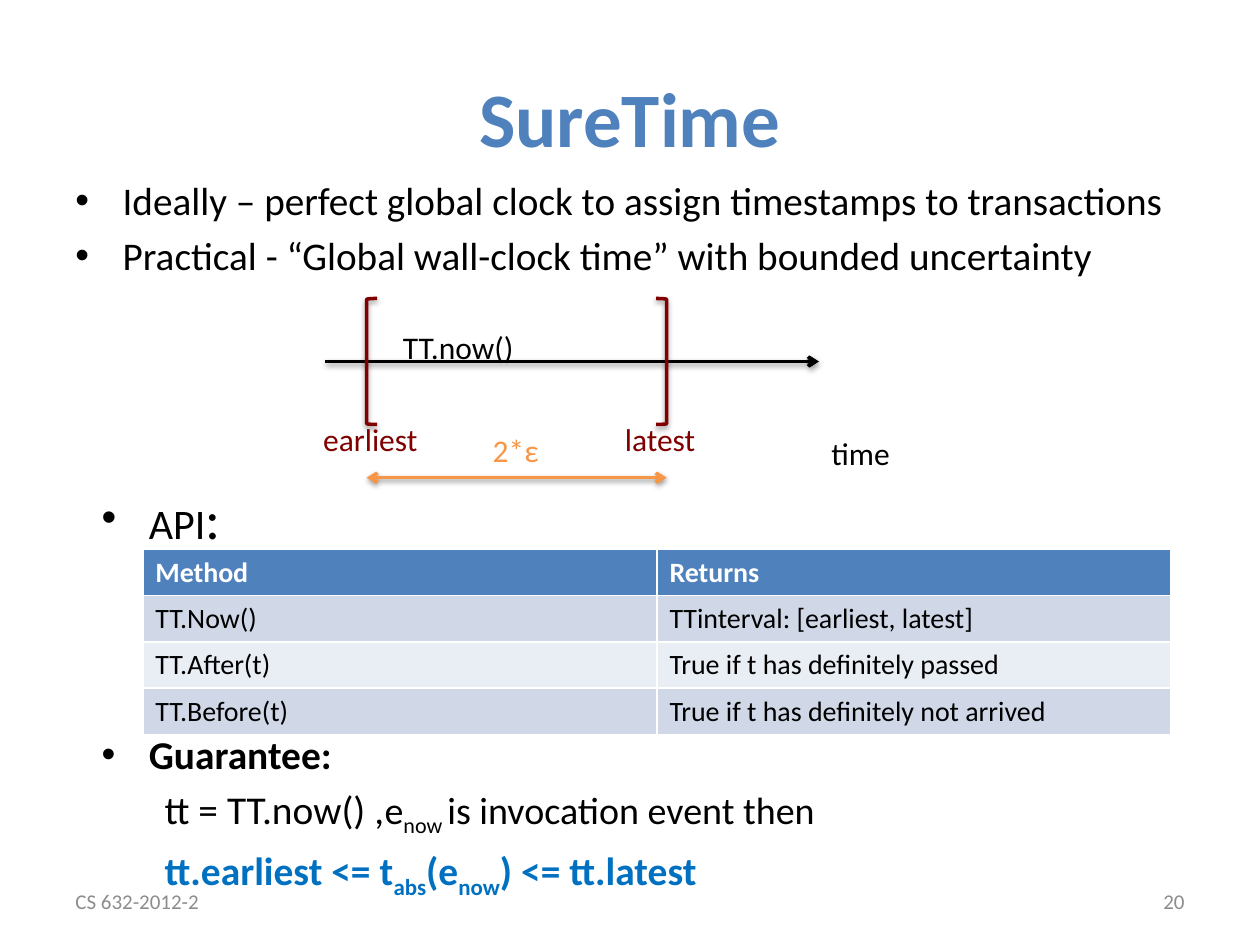
from dataclasses import dataclass

from lxml import etree
from pptx import Presentation
from pptx import util as u
from pptx.dml.color import RGBColor
from pptx.enum import shapes, text
from pptx.oxml import ns

Pt = u.Pt
BLACK = RGBColor(0x00, 0x00, 0x00)
WHITE = RGBColor(0xFF, 0xFF, 0xFF)
GREY = RGBColor(0x8C, 0x8C, 0x8C)
BLUE = RGBColor(0x4F, 0x81, 0xBD)
BRIGHT_BLUE = RGBColor(0x00, 0x70, 0xC0)
MAROON = RGBColor(0x80, 0x00, 0x00)
ORANGE = RGBColor(0xF7, 0x96, 0x46)
BANDS = (RGBColor(0xD0, 0xD8, 0xE8), RGBColor(0xE9, 0xED, 0xF4))
FONT = "Calibri"
INDENT = 27


@dataclass(frozen=True)
class Span:
    words: str
    size: float
    color: RGBColor = BLACK
    bold: bool = False
    subscript: bool = False


@dataclass(frozen=True)
class Para:
    spans: tuple[Span, ...]
    align: text.PP_ALIGN = text.PP_ALIGN.LEFT
    bullet: bool = False
    margin: float = 0
    before: float = 0
    line_spacing: float = 1.0


@dataclass(frozen=True)
class Area:
    left: float
    top: float
    width: float
    height: float

    def lengths(self) -> tuple[u.Length, ...]:
        return Pt(self.left), Pt(self.top), Pt(self.width), Pt(self.height)


def add_child(parent, tag: str, **attributes: str):
    child = etree.SubElement(parent, ns.qn(tag))
    for name, value in attributes.items():
        child.set(name, value)
    return child


def write_para(para, content: Para) -> None:
    properties = para._p.get_or_add_pPr()
    if content.bullet:
        add_child(properties, "a:buFont", typeface="Arial")
        add_child(properties, "a:buChar", char="•")
    if content.margin:
        properties.set("marL", str(Pt(content.margin)))
        properties.set("indent", str(Pt(-INDENT)))
    para.alignment = content.align
    para.space_before = Pt(content.before)
    para.line_spacing = content.line_spacing
    for part in content.spans:
        span = para.add_run()
        span.text = part.words
        span.font.name = FONT
        span.font.size = Pt(part.size)
        span.font.bold = part.bold
        span.font.color.rgb = part.color
        if part.subscript:
            span._r.get_or_add_rPr().set("baseline", "-25000")


def add_text(page, area: Area, paras: list[Para], middle: bool = False, wrap: bool = True) -> None:
    box = page.shapes.add_textbox(*area.lengths())
    frame = box.text_frame
    frame.word_wrap = wrap
    frame.vertical_anchor = text.MSO_ANCHOR.MIDDLE if middle else text.MSO_ANCHOR.TOP
    for number, content in enumerate(paras):
        write_para(frame.add_paragraph() if number else frame.paragraphs[0], content)


def add_label(page, words: str, area: Area, color: RGBColor) -> None:
    add_text(page, area, [Para((Span(words, 18, color),))], wrap=False)


def style_outline(shape, color: RGBColor) -> None:
    """Give the shape a coloured line and a soft shadow below it."""
    shape.line.color.rgb = color
    shape.line.width = Pt(2)
    effects = add_child(shape._element.spPr, "a:effectLst")
    shadow = add_child(effects, "a:outerShdw", blurRad=str(Pt(3.1)), dist=str(Pt(1.6)),
                       dir="5400000", rotWithShape="0")
    tint = add_child(shadow, "a:srgbClr", val=str(BLACK))
    add_child(tint, "a:alpha", val="38000")


def add_arrow(page, left: float, right: float, y: float, color: RGBColor,
              both_ends: bool = False) -> None:
    arrow = page.shapes.add_connector(shapes.MSO_CONNECTOR.STRAIGHT,
                                      Pt(left), Pt(y), Pt(right), Pt(y))
    style_outline(arrow, color)
    line = arrow.line._get_or_add_ln()
    if both_ends:
        add_child(line, "a:headEnd", type="arrow")
    add_child(line, "a:tailEnd", type="arrow")


def add_bracket(page, kind: shapes.MSO_SHAPE, left: float) -> None:
    bracket = page.shapes.add_shape(kind, *Area(left, 170.6, 6, 72).lengths())
    bracket.fill.background()
    style_outline(bracket, MAROON)


def add_api_table(page, area: Area, rows: list[tuple[str, str]]) -> None:
    table = page.shapes.add_table(len(rows), len(rows[0]), *area.lengths()).table
    for row_number, row in enumerate(rows):
        header = row_number == 0
        for column, words in enumerate(row):
            cell = table.cell(row_number, column)
            cell.fill.solid()
            cell.fill.fore_color.rgb = BLUE if header else BANDS[(row_number - 1) % 2]
            span = Span(words, 16, WHITE if header else BLACK, bold=header)
            write_para(cell.text_frame.paragraphs[0], Para((span,)))


def bullet(*spans: Span, before: float = 0, line_spacing: float = 1.0) -> Para:
    return Para(spans, bullet=True, margin=INDENT, before=before, line_spacing=line_spacing)


def formula(*spans: Span) -> Para:
    return Para(spans, margin=63, before=4.5)


def guarantee(words: str, subscript: bool = False) -> Span:
    return Span(words, 22.5, BRIGHT_BLUE, bold=True, subscript=subscript)


def main() -> None:
    deck = Presentation()
    deck.slide_width, deck.slide_height = Pt(720), Pt(540)
    page = deck.slides.add_slide(deck.slide_layouts[6])

    add_text(page, Area(36, 21.6, 648, 90),
             [Para((Span("SureTime", 44, BLUE, bold=True),), text.PP_ALIGN.CENTER)], middle=True)
    add_text(page, Area(36, 97.2, 648, 57.6), [
        bullet(Span("Ideally – perfect global clock to assign timestamps to transactions", 22.4)),
        bullet(Span("Practical - “Global wall-clock time” with bounded uncertainty", 22.4),
               before=4.5),
    ])
    for words, left, align in (("CS 632-2012-2", 36, text.PP_ALIGN.LEFT),
                               ("20", 516, text.PP_ALIGN.RIGHT)):
        add_text(page, Area(left, 500.5, 168, 28.75),
                 [Para((Span(words, 12, GREY),), align)], middle=True)

    add_arrow(page, 186, 468, 206.6, BLACK)
    add_bracket(page, shapes.MSO_SHAPE.LEFT_BRACKET, 209.5)
    add_bracket(page, shapes.MSO_SHAPE.RIGHT_BRACKET, 375)
    add_arrow(page, 209.5, 381, 273, ORANGE, both_ends=True)
    add_label(page, "time", Area(468, 244.2, 48, 29), BLACK)
    add_label(page, "earliest", Area(177.6, 236.2, 69, 29), MAROON)
    add_label(page, "latest", Area(350, 236.2, 56, 29), MAROON)
    add_label(page, "TT.now()", Area(223.2, 183.6, 80, 29), BLACK)
    add_label(page, "2*ε", Area(274.5, 242.6, 41, 29), ORANGE)

    add_api_table(page, Area(81.6, 314, 587.6, 105.6), [
        ("Method", "Returns"),
        ("TT.Now()", "TTinterval: [earliest, latest]"),
        ("TT.After(t)", "True if t has definitely passed"),
        ("TT.Before(t)", "True if t has definitely not arrived"),
    ])
    add_text(page, Area(51, 273, 648, 57.6), [bullet(Span("API", 24), Span(":", 32))])
    add_text(page, Area(51, 419, 648, 81.4), [
        bullet(Span("Guarantee:", 22.5, bold=True), line_spacing=0.8),
        formula(Span("tt = TT.now() ,", 22.5), Span("e", 21.7),
                Span("now ", 21.7, subscript=True), Span("is invocation event then", 21.7)),
        formula(guarantee("tt.earliest <= t"), guarantee("abs", subscript=True),
                guarantee("(e"), guarantee("now", subscript=True),
                guarantee(") <= tt.latest")),
    ])
    deck.save("out.pptx")


if __name__ == "__main__":
    main()
